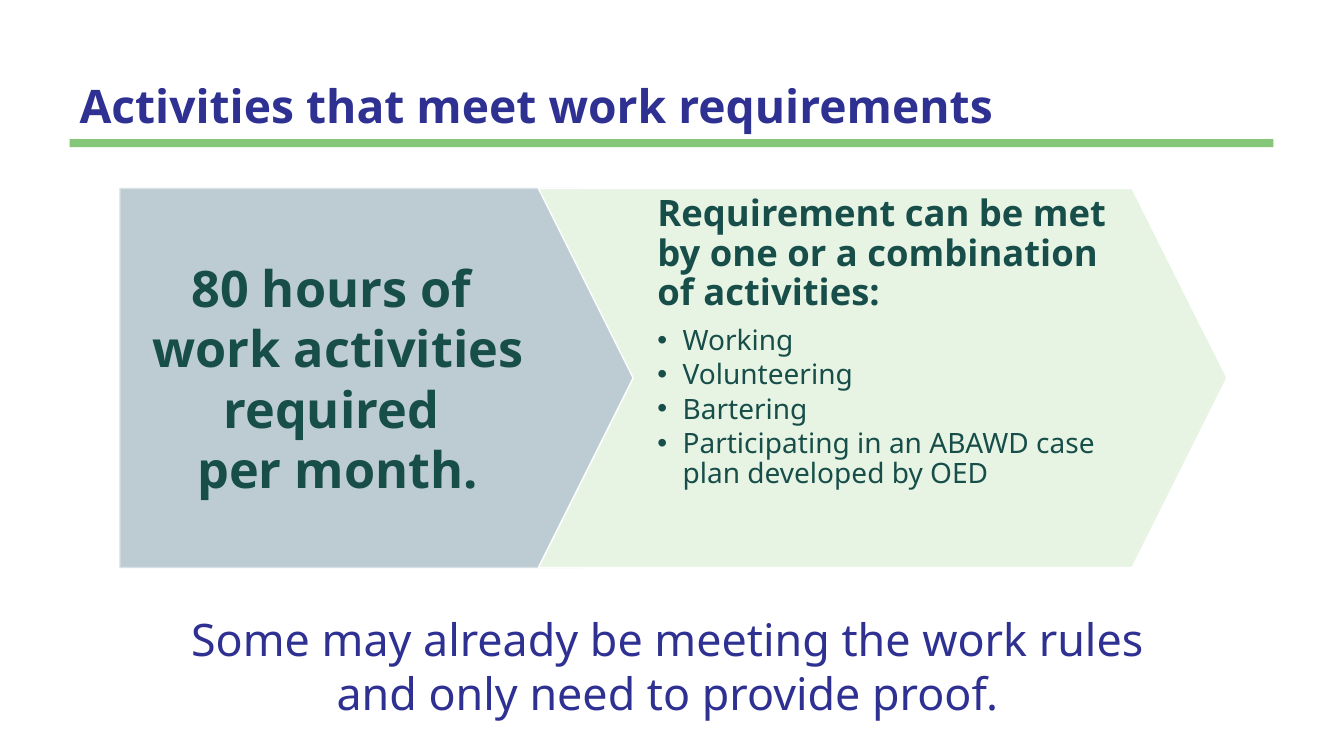
from lxml import etree
from pptx import Presentation
from pptx import util as u
from pptx.dml.color import RGBColor
from pptx.enum import shapes, text
from pptx.oxml.ns import qn

PX = 9144  # EMU; 100 px to the inch

WHITE = RGBColor(0xFF, 0xFF, 0xFF)
INDIGO = RGBColor(0x2E, 0x31, 0x92)
GREEN = RGBColor(0x86, 0xC6, 0x79)
PALE_GREEN = RGBColor(0xE7, 0xF4, 0xE4)
DARK_TEAL = RGBColor(0x18, 0x4E, 0x49)
BLUE_GREY = RGBColor(0xBD, 0xCC, 0xD3)
PALE_GREY = RGBColor(0xD8, 0xE1, 0xE5)

ARROW_TOP, ARROW_HEIGHT = 187, 376
LEFT_EDGE = 119


def px(length):
    return u.Emu(length * PX)


def add_bullet(paragraph, indent):
    properties = paragraph._p.get_or_add_pPr()
    properties.set("marL", str(px(indent)))
    properties.set("indent", str(-px(indent)))
    etree.SubElement(properties, qn("a:buFont")).set("typeface", "Arial")
    etree.SubElement(properties, qn("a:buChar")).set("char", "•")


def write(frame, content, *, size, color, bold=False, align=text.PP_ALIGN.LEFT,
          line_spacing=None, space_after=0, bullet_indent=None):
    """Append one paragraph to the frame, using its empty first one if free."""
    paragraph = frame.paragraphs[0]
    if paragraph.runs:
        paragraph = frame.add_paragraph()
    paragraph.alignment = align
    paragraph.line_spacing = line_spacing
    paragraph.space_after = u.Pt(space_after)
    if bullet_indent:
        add_bullet(paragraph, bullet_indent)
    run = paragraph.add_run()
    run.text = content
    font = run.font
    font.name = SlideBuilder.FONT
    font.size = u.Pt(size)
    font.bold = bold
    font.color.rgb = color


class SlideBuilder:
    FONT = "Noto Sans"

    def __init__(self, slide):
        self.slide = slide

    def block(self, kind, left, top, width, height, fill, line=None, point=None):
        """Draw a filled preset shape; point is the depth of its arrow tip."""
        shape = self.slide.shapes.add_shape(
            kind, px(left), px(top), px(width), px(height))
        shape.shadow.inherit = False
        shape.fill.solid()
        shape.fill.fore_color.rgb = fill
        if line is None:
            shape.line.fill.background()
        else:
            shape.line.color.rgb = line
            shape.line.width = u.Pt(1)
        if point is not None:
            shape.adjustments[0] = point

    def text_box(self, left, top, width, height, insets=(10, 5, 10, 5),
                 anchor=text.MSO_ANCHOR.TOP):
        """Add an empty text box and return its frame."""
        box = self.slide.shapes.add_textbox(
            px(left), px(top), px(width), px(height))
        frame = box.text_frame
        frame.word_wrap = True
        frame.vertical_anchor = anchor
        (frame.margin_left, frame.margin_top,
         frame.margin_right, frame.margin_bottom) = map(px, insets)
        return frame


def add_heading(builder):
    builder.block(shapes.MSO_SHAPE.RECTANGLE, 69, 138, 1194, 8, GREEN)
    frame = builder.text_box(69, 47, 1195, 90, anchor=text.MSO_ANCHOR.BOTTOM)
    write(frame, "Activities that meet work requirements",
          size=33, color=INDIGO, bold=True, line_spacing=0.9)


def add_hours_arrow(builder):
    builder.block(shapes.MSO_SHAPE.PENTAGON, LEFT_EDGE, ARROW_TOP, 551,
                  ARROW_HEIGHT, BLUE_GREY, PALE_GREY, point=0.25)
    frame = builder.text_box(LEFT_EDGE, ARROW_TOP, 504, ARROW_HEIGHT,
                             (24, 10, 96, 10), text.MSO_ANCHOR.MIDDLE)
    for line in ("80 hours of ", "work activities required ", "per month."):
        write(frame, line, size=36, color=DARK_TEAL, bold=True,
              align=text.PP_ALIGN.CENTER)


def add_activities_arrow(builder):
    builder.block(shapes.MSO_SHAPE.CHEVRON, 534, ARROW_TOP, 683,
                  ARROW_HEIGHT, PALE_GREEN, WHITE, point=0.25)
    frame = builder.text_box(628, ARROW_TOP, 495, ARROW_HEIGHT, (24, 7, 24, 7))
    write(frame, "Requirement can be met by one or a combination of activities:",
          size=26, color=DARK_TEAL, bold=True, line_spacing=0.9, space_after=9)
    for activity in ("Working", "Volunteering", "Bartering",
                     "Participating in an ABAWD case plan developed by OED"):
        write(frame, activity, size=20, color=DARK_TEAL, line_spacing=0.9,
              space_after=3, bullet_indent=25)


def add_closing_note(builder):
    frame = builder.text_box(LEFT_EDGE, 602, 1098, 118)
    frame.auto_size = text.MSO_AUTO_SIZE.SHAPE_TO_FIT_TEXT
    for line in ("Some may already be meeting the work rules ",
                 "and only need to provide proof. "):
        write(frame, line, size=32, color=INDIGO, align=text.PP_ALIGN.CENTER)


def main():
    presentation = Presentation()
    presentation.slide_width = px(1333)
    presentation.slide_height = px(750)
    blank_layout = presentation.slide_layouts[6]
    builder = SlideBuilder(presentation.slides.add_slide(blank_layout))
    add_heading(builder)
    add_hours_arrow(builder)
    add_activities_arrow(builder)
    add_closing_note(builder)
    presentation.save("out.pptx")


if __name__ == "__main__":
    main()
